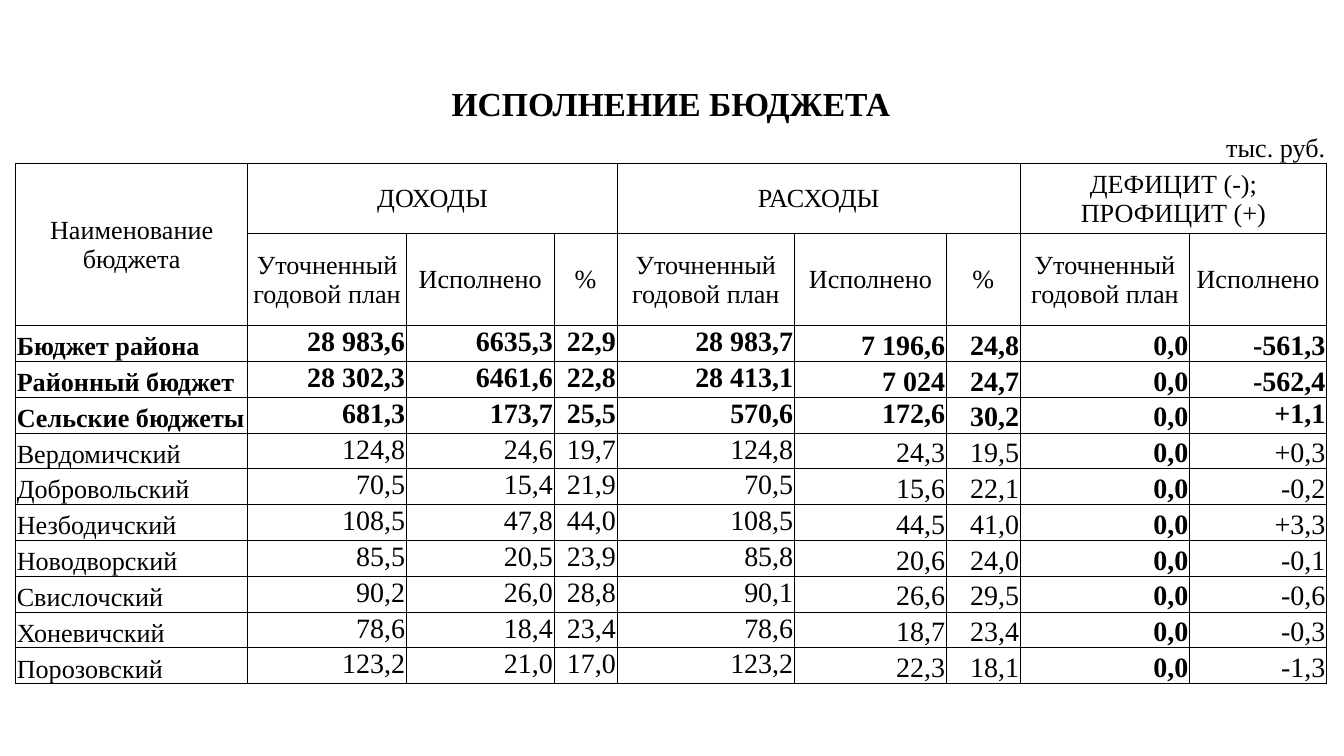
from lxml import etree
from pptx import Presentation
from pptx.dml.color import RGBColor
from pptx.enum.text import MSO_ANCHOR, PP_ALIGN
from pptx.oxml.ns import qn
from pptx.util import Pt

LEFT, CENTER, RIGHT = PP_ALIGN.LEFT, PP_ALIGN.CENTER, PP_ALIGN.RIGHT
TOP, MIDDLE, BOTTOM = MSO_ANCHOR.TOP, MSO_ANCHOR.MIDDLE, MSO_ANCHOR.BOTTOM
FONT, BLACK = "Times New Roman", "000000"

# Content
TITLE = "ИСПОЛНЕНИЕ БЮДЖЕТА"
UNIT = "тыс. руб."
GROUPS = ["Наименование бюджета", "ДОХОДЫ", "РАСХОДЫ", "ДЕФИЦИТ (-); ПРОФИЦИТ (+)"]
PLAN, DONE = "Уточненный годовой план", "Исполнено"
MEASURES = ["", PLAN, DONE, "%", PLAN, DONE, "%", PLAN, DONE]
BUDGETS = [
    ["Бюджет района", "28 983,6", "6635,3", "22,9", "28 983,7", "7 196,6", "24,8", "0,0", "-561,3"],
    ["Районный бюджет", "28 302,3", "6461,6", "22,8", "28 413,1", "7 024", "24,7", "0,0", "-562,4"],
    ["Сельские бюджеты", "681,3", "173,7", "25,5", "570,6", "172,6", "30,2", "0,0", "+1,1"],
    ["Вердомичский", "124,8", "24,6", "19,7", "124,8", "24,3", "19,5", "0,0", "+0,3"],
    ["Добровольский", "70,5", "15,4", "21,9", "70,5", "15,6", "22,1", "0,0", "-0,2"],
    ["Незбодичский", "108,5", "47,8", "44,0", "108,5", "44,5", "41,0", "0,0", "+3,3"],
    ["Новодворский", "85,5", "20,5", "23,9", "85,8", "20,6", "24,0", "0,0", "-0,1"],
    ["Свислочский", "90,2", "26,0", "28,8", "90,1", "26,6", "29,5", "0,0", "-0,6"],
    ["Хоневичский", "78,6", "18,4", "23,4", "78,6", "18,7", "23,4", "0,0", "-0,3"],
    ["Порозовский", "123,2", "21,0", "17,0", "123,2", "22,3", "18,1", "0,0", "-1,3"],
]
TOTALS = 3            # leading bold rows
DEFICIT_PLAN = 7      # value column that is always bold
TOP_FIELDS = {1, 2, 3, 4}
TOP_CELLS = {(2, 5), (2, 8)}

# Grid
COLS = [124.5, 72.7, 12.2, 52.6, 26.6, 33.8, 95, 64.8, 16.6, 39.6, 90.7, 8.6, 64.8]
ROWS = [24.5, 19.2, 37.5, 49.3] + [19.2] * len(BUDGETS)
UNIT_SPANS = [1, 1, 2, 2, 1, 1, 2, 2, 1]
GROUP_SPANS = [1, 5, 4, 3]
FIELD_SPANS = [1, 2, 2, 1, 1, 2, 1, 1, 2]


def rgb(value):
    return RGBColor.from_string(value)


def add_borders(cell, ruled_sides):
    tcPr = cell._tc.get_or_add_tcPr()
    for side in "LRTB":
        ln = etree.SubElement(tcPr, qn(f"a:ln{side}"), w=str(Pt(0.5)))
        if side in ruled_sides:
            fill = etree.SubElement(ln, qn("a:solidFill"))
            etree.SubElement(fill, qn("a:srgbClr"), val=BLACK)
        else:
            etree.SubElement(ln, qn("a:noFill"))


def write(cell, text, align, anchor, size=14, bold=False):
    cell.vertical_anchor = anchor
    p = cell.text_frame.paragraphs[0]
    p.alignment = align
    r = p.add_run()
    r.text = text
    for name, value in {"name": FONT, "size": Pt(size), "bold": bold}.items():
        setattr(r.font, name, value)
    r.font.color.rgb = rgb(BLACK)


def span_cells(table, row, spans):
    """Merge a row by its column spans and return the leading cells."""
    cells, col = [], 0
    for span in spans:
        cell = table.cell(row, col)
        if span > 1:
            cell.merge(table.cell(row, col + span - 1))
        cells.append(cell)
        col += span
    return cells


prs = Presentation()
prs.slide_width, prs.slide_height = Pt(720), Pt(405)
s = prs.slides.add_slide(prs.slide_layouts[6])

# Plain table
table = s.shapes.add_table(len(ROWS), len(COLS), Pt(8.3), Pt(43.9),
                           Pt(sum(COLS)), Pt(sum(ROWS))).table
table.first_row = table.horz_banding = False
for col, width in zip(table.columns, COLS):
    col.width = Pt(width)
for i, (row, height) in enumerate(zip(table.rows, ROWS)):
    row.height = Pt(height)
    for cell in row.cells:
        add_borders(cell, "LRTB" if i > 1 else "B" if i == 1 else "")
        cell.fill.background()
        for side in ("left", "right", "top"):
            setattr(cell, f"margin_{side}", Pt(0.7))
        cell.margin_bottom = 0
        # Small end mark keeps empty cells from stretching their row
        etree.SubElement(cell.text_frame.paragraphs[0]._p, qn("a:endParaRPr"), sz="1400")

# Title and unit
write(span_cells(table, 0, [len(COLS)])[0], TITLE, CENTER, MIDDLE, 18, True)
write(span_cells(table, 1, UNIT_SPANS)[-1], UNIT, RIGHT, BOTTOM)

# Two-level header
table.cell(2, 0).merge(table.cell(3, 0))
for i, (labels, spans) in enumerate([(GROUPS, GROUP_SPANS), (MEASURES, FIELD_SPANS)], 2):
    for cell, label in zip(span_cells(table, i, spans), labels):
        if label:
            write(cell, label, CENTER, MIDDLE)

# Budget rows
for i, budget in enumerate(BUDGETS):
    for j, (cell, text) in enumerate(zip(span_cells(table, i + 4, FIELD_SPANS), budget)):
        at_top = j in TOP_FIELDS or (i, j) in TOP_CELLS
        first_total = i == 0 and j == 0
        write(cell, text, RIGHT if j else LEFT, TOP if at_top else BOTTOM,
              15 if j else 14, i < TOTALS or j == DEFICIT_PLAN)

prs.save("out.pptx")
